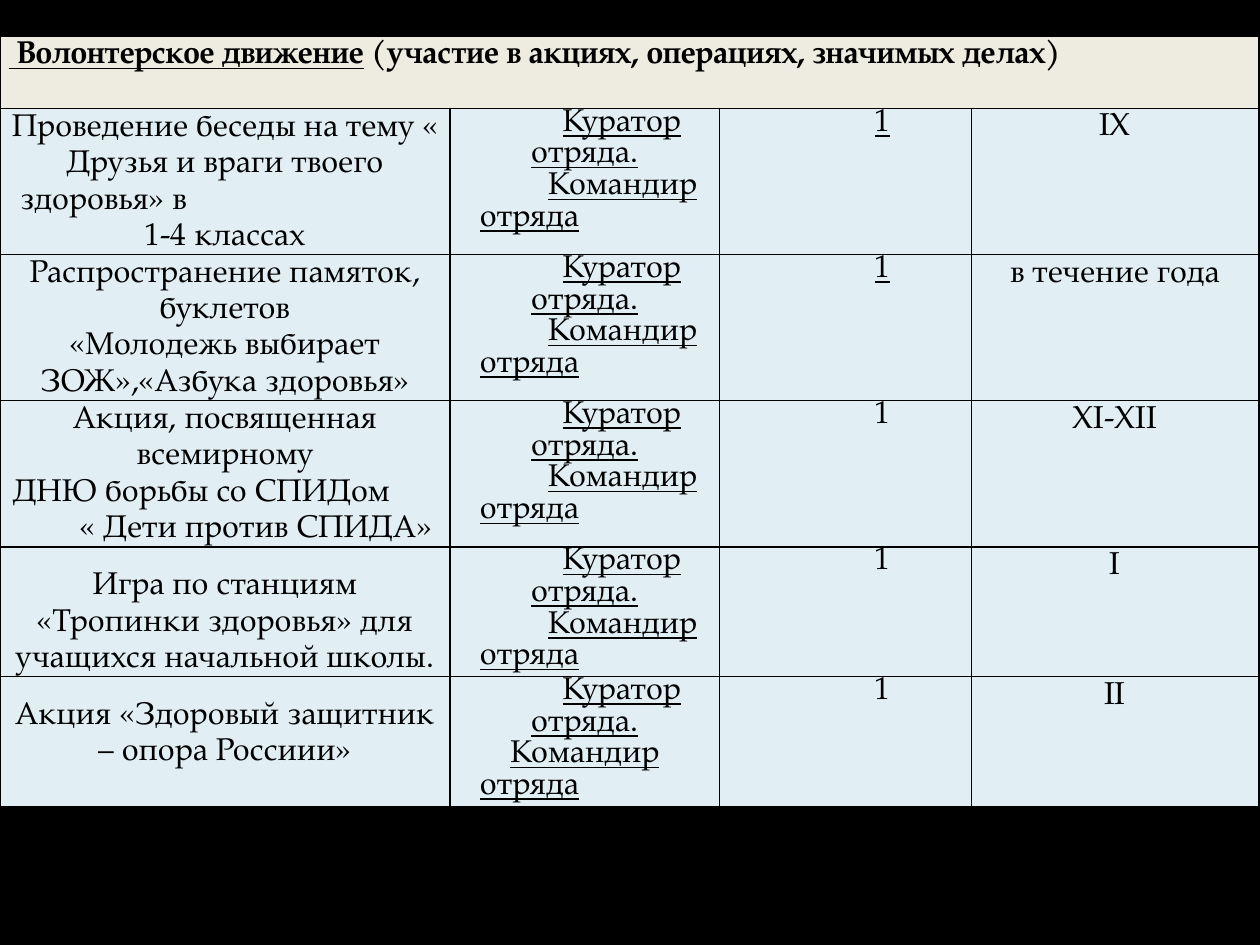
from lxml import etree
from pptx import Presentation
from pptx import util as u
from pptx.dml.color import RGBColor
from pptx.enum import text
from pptx.oxml import ns

COLORS = {"background": "000000", "ink": "000000", "heading": "EEECE1", "body": "E1EFF4"}
FONT = {"name": "TeX Gyre Pagella", "size": u.Pt(18)}
CELL = {"margin_left": u.Inches(0.07), "margin_right": u.Inches(0.07),
        "margin_top": 0, "margin_bottom": 0}
COLUMNS = [3.57, 2.14, 2, 2.28]
ROWS = [0.57, 1.16, 1.16, 1.16, 1.03, 1.03]
CENTER, LEFT = text.PP_ALIGN.CENTER, text.PP_ALIGN.LEFT
TOP, BOTTOM = text.MSO_ANCHOR.TOP, text.MSO_ANCHOR.BOTTOM
FIRST_LINE = 0.59
LEADER_MARGIN, LEADER_TAB = 0.17, 1.83


def item(words, align=CENTER, spacing=1.15, margin=0, indent=0, tab=None, **font):
    """Describe one paragraph; words is a string or a list of (string, font) pairs."""
    runs = [(words, font)] if isinstance(words, str) else words
    return {"runs": runs, "align": align, "spacing": spacing,
            "margin": margin, "indent": indent, "tab": tab}


def leaders(commander_indent=0.54):
    """Describe the underlined names of the people in charge."""
    return [item("Куратор отряда.", spacing=1, indent=FIRST_LINE, underline=True),
            item("Командир отряда\t", LEFT, 1, LEADER_MARGIN, commander_indent,
                 LEADER_TAB, underline=True)]


HEADING = [item([(" Волонтерское движение", {"bold": True, "underline": True}),
                 (" (участие в акциях, операциях, значимых делах)", {"bold": True})], LEFT)]
EVENTS = [
    {"event": [item("Проведение беседы на тему « Друзья и враги твоего"),
               item("здоровья» в", LEFT, margin=0.09),
               item("1-4 классах")],
     "anchor": BOTTOM, "underline": True, "month": "IX"},
    {"event": [item("Распространение памяток, буклетов"),
               item("«Молодежь выбирает ЗОЖ»,«Азбука здоровья»")],
     "underline": True, "month": "в течение года"},
    {"event": [item("Акция, посвященная всемирному"),
               item("ДНЮ борьбы со СПИДом", LEFT, margin=0.03),
               item("« Дети против СПИДА»", margin=0.49)],
     "month": "XI-XII"},
    {"event": [item("Игра по станциям «Тропинки здоровья» для учащихся начальной школы.")],
     "anchor": BOTTOM, "month": "I"},
    {"event": [item("Акция «Здоровый защитник – опора Россиии»")],
     "anchor": BOTTOM, "bottom": 0.29, "commander": 0.24, "month": "II"},
]


def set_borders(cell):
    """Draw a thin line on every side of a cell."""
    properties = cell._tc.get_or_add_tcPr()
    for side in ("a:lnL", "a:lnR", "a:lnT", "a:lnB"):
        line = etree.SubElement(properties, ns.qn(side), w=str(u.Pt(1)))
        fill = etree.SubElement(line, ns.qn("a:solidFill"))
        etree.SubElement(fill, ns.qn("a:srgbClr"), val=COLORS["ink"])


def write_paragraph(paragraph, content):
    """Fill a paragraph with its runs, indents and tab stop."""
    paragraph.alignment = content["align"]
    paragraph.line_spacing = float(content["spacing"])
    properties = paragraph._p.get_or_add_pPr()
    properties.set("marL", str(u.Inches(content["margin"])))
    properties.set("indent", str(u.Inches(content["indent"])))
    if content["tab"]:
        tabs = etree.SubElement(properties, ns.qn("a:tabLst"))
        etree.SubElement(tabs, ns.qn("a:tab"), pos=str(u.Inches(content["tab"])), algn="l")
    for words, font in content["runs"]:
        run = paragraph.add_run()
        run.text = words
        for name, value in {**FONT, **font}.items():
            setattr(run.font, name, value)
        run.font.color.rgb = RGBColor.from_string(COLORS["ink"])


def fill_cell(cell, contents, color, anchor=TOP, bottom=0):
    """Format a cell and write its paragraphs."""
    values = {**CELL, "vertical_anchor": anchor, "margin_bottom": u.Inches(bottom)}
    for name, value in values.items():
        setattr(cell, name, value)
    set_borders(cell)
    cell.fill.solid()
    cell.fill.fore_color.rgb = RGBColor.from_string(COLORS[color])
    frame = cell.text_frame
    for index, content in enumerate(contents):
        paragraph = frame.add_paragraph() if index else frame.paragraphs[0]
        write_paragraph(paragraph, content)


def add_plan_table(slide, left, top, width, height):
    """Place the table of volunteer events in the given box."""
    table = slide.shapes.add_table(len(ROWS), len(COLUMNS), left, top, width, height).table
    for column, size in zip(table.columns, COLUMNS):
        column.width = u.Inches(size)
    for row, size in zip(table.rows, ROWS):
        row.height = u.Inches(size)
    for index in range(1, len(COLUMNS)):
        fill_cell(table.cell(0, index), [], "heading")
    fill_cell(table.cell(0, 0), HEADING, "heading")
    table.cell(0, 0).merge(table.cell(0, len(COLUMNS) - 1))
    for row, event in enumerate(EVENTS, 1):
        fill_cell(table.cell(row, 0), event["event"], "body",
                  event.get("anchor", TOP), event.get("bottom", 0))
        count = item("1", spacing=1, indent=FIRST_LINE, underline=event.get("underline", False))
        others = [leaders(event.get("commander", 0.54)), [count], [item(event["month"])]]
        for column, contents in enumerate(others, 1):
            fill_cell(table.cell(row, column), contents, "body")


def main():
    """Build and save the presentation."""
    presentation = Presentation()
    presentation.slide_width, presentation.slide_height = u.Inches(10), u.Inches(7.5)
    slide = presentation.slides.add_slide(presentation.slide_layouts[6])
    slide.background.fill.solid()
    slide.background.fill.fore_color.rgb = RGBColor.from_string(COLORS["background"])
    add_plan_table(slide, 0, u.Inches(0.29), u.Inches(10), u.Inches(sum(ROWS)))
    presentation.save("out.pptx")


if __name__ == "__main__":
    main()
